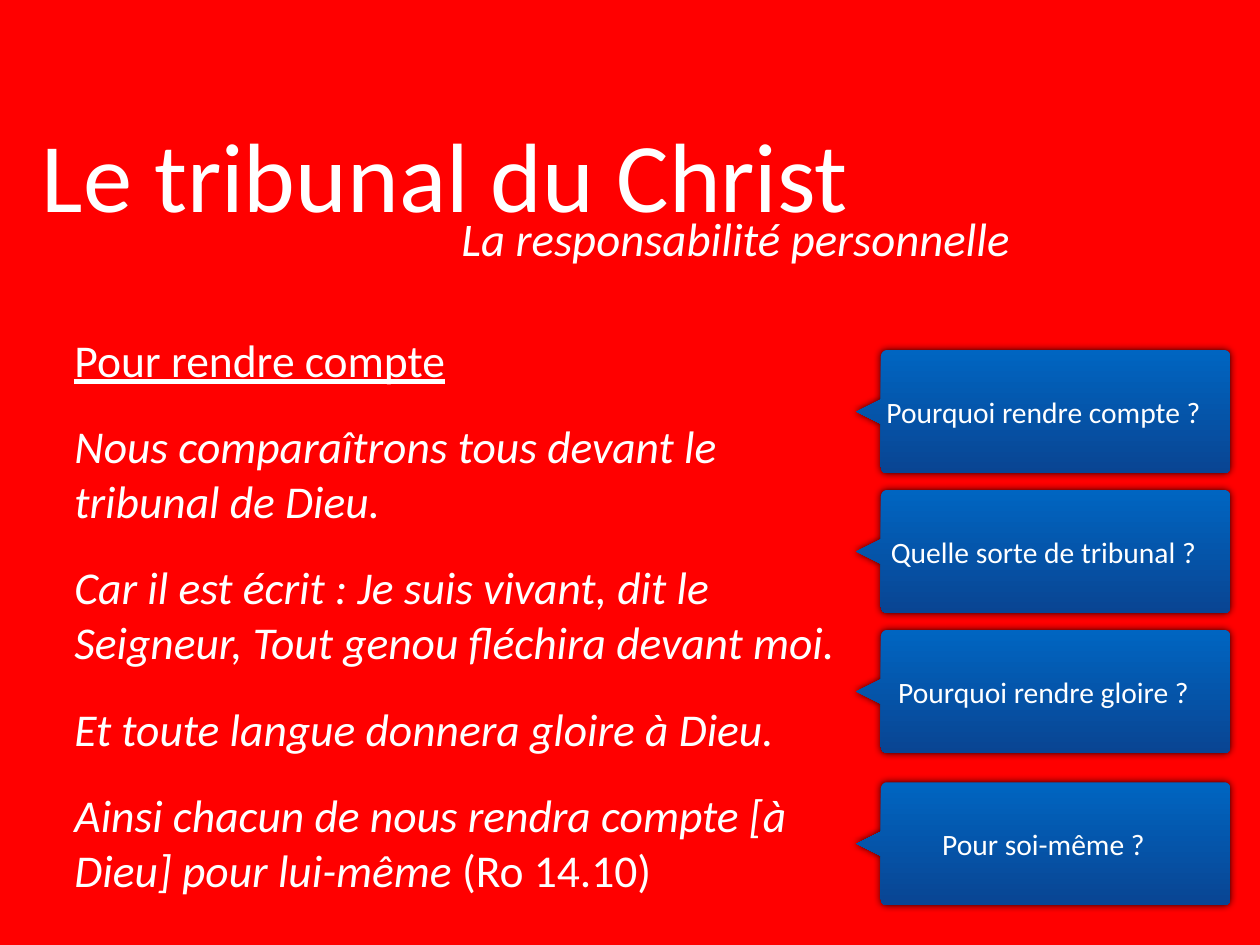
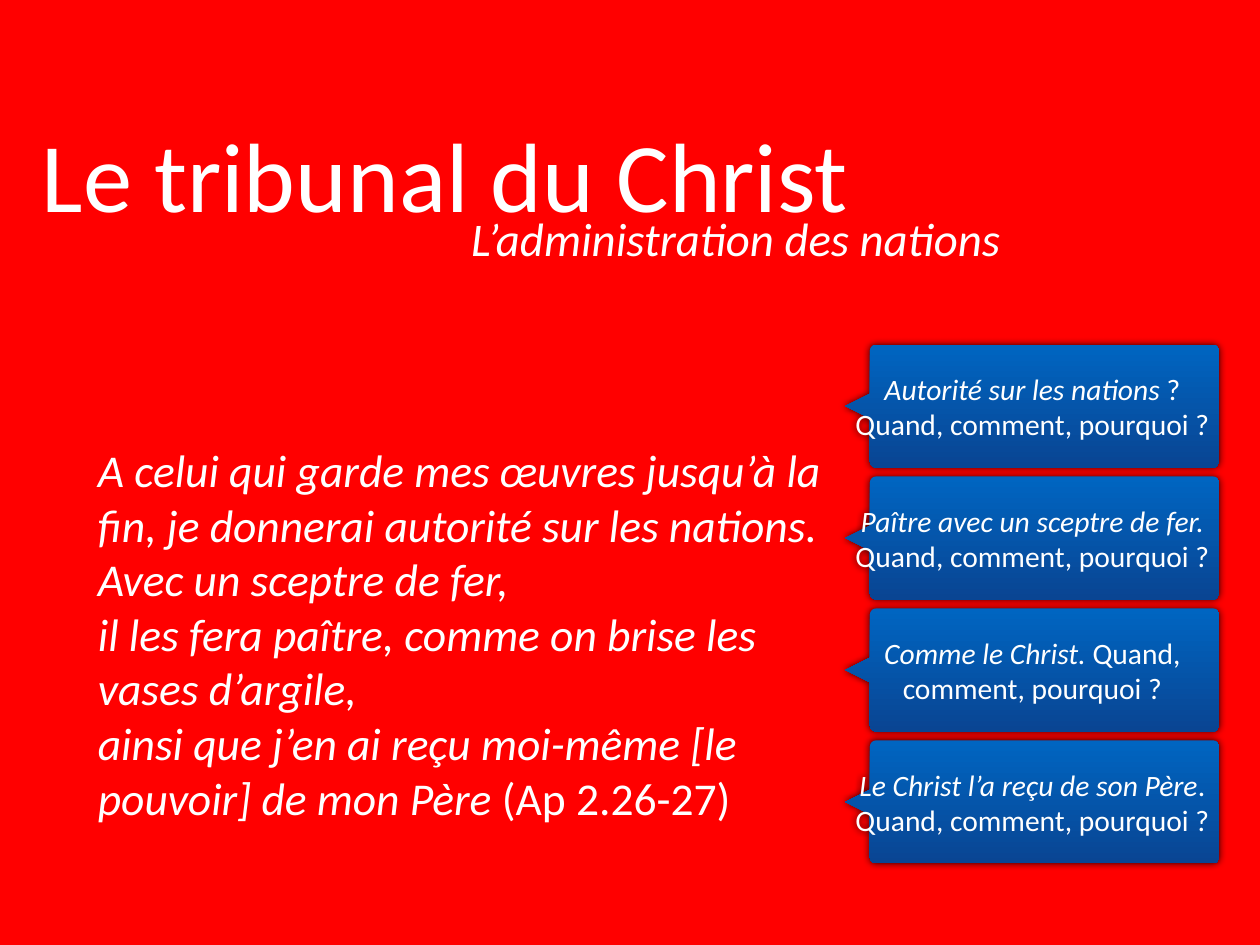
import math
from dataclasses import dataclass

import pptx
import pptx.dml.color
import pptx.enum.text
import pptx.oxml
import pptx.oxml.ns
import pptx.util

Pt = pptx.util.Pt
ALIGN = pptx.enum.text.PP_ALIGN

COLORS = {
    "background": "FF0000",
    "text": "FFFFFF",
    "callout_top": "0065C1",
    "callout_bottom": "094593",
    "shadow": "000000",
}
FONT = "Calibri"
INSET = 4.5
TITLE = "Le tribunal du Christ"

# Callout geometry
CALLOUT_WIDTH, CALLOUT_HEIGHT = 304, 100
TAIL_LENGTH, TAIL_HALF = 20, 10
CORNER_RADIUS, CORNER_STEPS = 5, 6


@dataclass
class Span:
    text: str
    italic: bool = False
    underline: bool = False


@dataclass
class Callout:
    top: float
    spans: list[Span]


@dataclass
class Lesson:
    subtitle: str
    body_left: float
    body_top: float
    body_gap: float
    body: list[list[Span]]
    callout_left: float
    callouts: list[Callout]


def color(name: str) -> pptx.dml.color.RGBColor:
    return pptx.dml.color.RGBColor.from_string(COLORS[name])


def write(box, paragraphs: list[list[Span]], size: float, align,
          gap: float = 0) -> None:
    """Fill a shape with styled paragraphs, centred vertically."""
    frame = box.text_frame
    frame.word_wrap = True
    frame.auto_size = pptx.enum.text.MSO_AUTO_SIZE.NONE
    frame.vertical_anchor = pptx.enum.text.MSO_ANCHOR.MIDDLE
    frame.margin_left = frame.margin_right = Pt(INSET)
    frame.margin_top = frame.margin_bottom = Pt(INSET)
    for index, spans in enumerate(paragraphs):
        para = frame.add_paragraph() if index else frame.paragraphs[0]
        para.alignment = align
        para.space_before = Pt(gap if index else 0)
        for span in spans:
            run = para.add_run()
            run.text = span.text
            run.font.name = FONT
            run.font.size = Pt(size)
            run.font.italic = span.italic
            run.font.underline = span.underline
            run.font.color.rgb = color("text")


def add_title(page) -> None:
    title = page.shapes.title
    title.left, title.top = Pt(15), Pt(57)
    title.width, title.height = Pt(694), Pt(167)
    write(title, [[Span(TITLE)]], 80, ALIGN.CENTER)


def add_subtitle(page, text: str) -> None:
    box = page.shapes.add_textbox(Pt(337), Pt(180.5), Pt(522), Pt(41))
    write(box, [[Span(text, italic=True)]], 38, ALIGN.CENTER)
    box.text_frame.paragraphs[0].line_spacing = Pt(30)


def callout_outline(left: float, top: float) -> list[tuple[float, float]]:
    """Rounded rectangle with a tail on its left side, clockwise."""
    right, bottom = left + CALLOUT_WIDTH, top + CALLOUT_HEIGHT
    edge, middle, radius = left + TAIL_LENGTH, top + CALLOUT_HEIGHT / 2, CORNER_RADIUS
    corners = [
        (edge + radius, top + radius, 180),
        (right - radius, top + radius, 270),
        (right - radius, bottom - radius, 0),
        (edge + radius, bottom - radius, 90),
    ]
    points = [(left, middle), (edge, middle - TAIL_HALF)]
    for center_x, center_y, start in corners:
        for step in range(CORNER_STEPS + 1):
            angle = math.radians(start + 90 * step / CORNER_STEPS)
            points.append((center_x + radius * math.cos(angle),
                           center_y + radius * math.sin(angle)))
    points.append((edge, middle + TAIL_HALF))
    return points


def add_glow_shadow(shape) -> None:
    shape.shadow.inherit = False
    effects = shape._element.spPr.find(pptx.oxml.ns.qn("a:effectLst"))
    effects.append(pptx.oxml.parse_xml(
        f'<a:outerShdw {pptx.oxml.ns.nsdecls("a")} blurRad="{Pt(6)}" dist="0" '
        f'dir="18900000" rotWithShape="0"><a:srgbClr val="{COLORS["shadow"]}">'
        '<a:alpha val="80000"/></a:srgbClr></a:outerShdw>'))


def add_callout(page, left: float, callout: Callout) -> None:
    points = [(Pt(x), Pt(y)) for x, y in callout_outline(left, callout.top)]
    builder = page.shapes.build_freeform(*points[0])
    builder.add_line_segments(points[1:], close=True)
    shape = builder.convert_to_shape()
    shape.fill.gradient()
    shape.fill.gradient_angle = 270
    for stop, name in zip(shape.fill.gradient_stops, ("callout_top", "callout_bottom")):
        stop.color.rgb = color(name)
    for position, stop in enumerate(shape.fill.gradient_stops):
        stop.position = position
    shape.line.fill.background()
    add_glow_shadow(shape)
    write(shape, [callout.spans], 24, ALIGN.CENTER)


def add_lesson(deck, lesson: Lesson) -> None:
    page = deck.slides.add_slide(deck.slide_layouts.get_by_name("Title Only"))
    add_title(page)
    body = page.shapes.add_textbox(
        Pt(lesson.body_left), Pt(lesson.body_top), Pt(633), Pt(495))
    write(body, lesson.body, 37, ALIGN.LEFT, lesson.body_gap)
    add_subtitle(page, lesson.subtitle)
    for callout in lesson.callouts:
        add_callout(page, lesson.callout_left, callout)


# Slide content
QUESTIONS = "Quand, comment, pourquoi ?"

LESSONS = [
    Lesson(
        subtitle="La responsabilité personnelle",
        body_left=56, body_top=251.5, body_gap=26,
        body=[
            [Span("Pour rendre compte", underline=True)],
            [Span("Nous comparaîtrons tous devant le tribunal de Dieu.", italic=True)],
            [Span("Car il est écrit : Je suis vivant, dit le Seigneur, "
                  "Tout genou fléchira devant moi.", italic=True)],
            [Span("Et toute langue donnera gloire à Dieu.", italic=True)],
            [Span("Ainsi chacun de nous rendra compte [à Dieu] pour lui-même ",
                  italic=True), Span("(Ro 14.10)")],
        ],
        callout_left=696,
        callouts=[
            Callout(284.5, [Span("Pourquoi rendre compte ?")]),
            Callout(398.25, [Span("Quelle sorte de tribunal ?")]),
            Callout(512, [Span("Pourquoi rendre gloire ?")]),
            Callout(635.75, [Span("Pour soi-même ?")]),
        ],
    ),
    Lesson(
        subtitle="L’administration des nations",
        body_left=75, body_top=267, body_gap=0,
        body=[
            [Span("A celui qui garde mes œuvres jusqu’à la fin, "
                  "je donnerai autorité sur les nations.", italic=True)],
            [Span("Avec un sceptre de fer,", italic=True)],
            [Span("il les fera paître, comme on brise les vases d’argile,", italic=True)],
            [Span("ainsi que j’en ai reçu moi-même [le pouvoir] de mon Père",
                  italic=True), Span(" (Ap 2.26-27)")],
        ],
        callout_left=687,
        callouts=[
            Callout(280 + 107.25 * row, [Span(lead, italic=True), Span(joint + QUESTIONS)])
            for row, (lead, joint) in enumerate([
                ("Autorité sur les nations", " ? "),
                ("Paître avec un sceptre de fer.", " "),
                ("Comme le Christ. ", ""),
                ("Le Christ l’a reçu de son Père", ". "),
            ])
        ],
    ),
]


def main() -> None:
    deck = pptx.Presentation()
    deck.slide_width, deck.slide_height = Pt(1024), Pt(768)
    background = deck.slide_master.background.fill
    background.solid()
    background.fore_color.rgb = color("background")
    for lesson in LESSONS:
        add_lesson(deck, lesson)
    deck.save("out.pptx")


if __name__ == "__main__":
    main()
